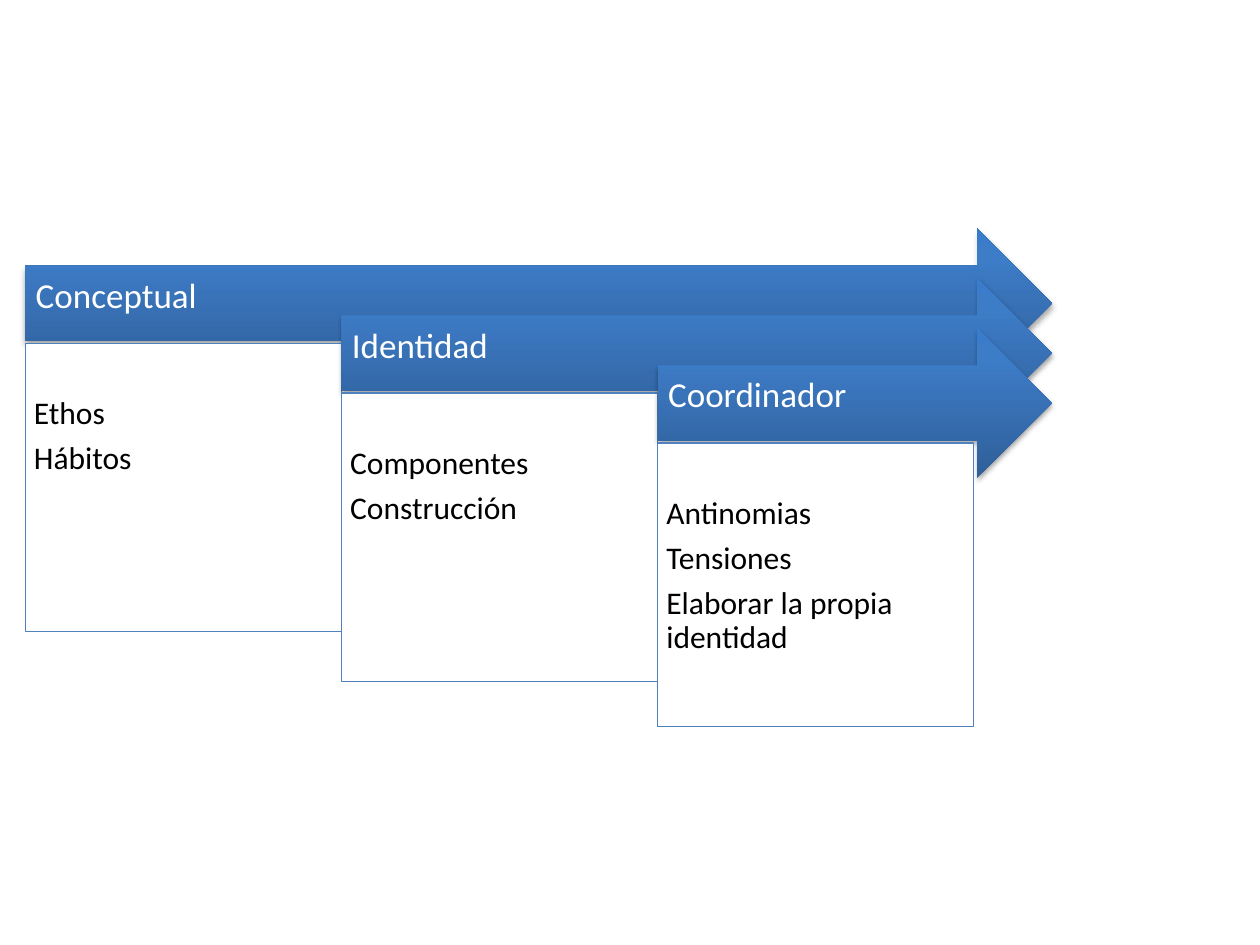
import dataclasses

import pptx
import pptx.dml.color
import pptx.enum.shapes
import pptx.enum.text
import pptx.oxml
import pptx.oxml.ns
import pptx.util

Pt = pptx.util.Pt
RGB = pptx.dml.color.RGBColor.from_string
SHAPE = pptx.enum.shapes.MSO_SHAPE
ANCHOR = pptx.enum.text.MSO_ANCHOR


@dataclasses.dataclass(frozen=True)
class Theme:
    font: str = "Calibri"
    heading_size: float = 20
    topic_size: float = 18
    heading_color: str = "FFFFFF"
    topic_color: str = "000000"
    panel_fill: str = "FFFFFF"
    panel_line: str = "4F81BD"
    arrow_stops: tuple = ((0, "2F5F99"), (80, "3D7CC7"), (100, "3A7CCB"))
    shadow_color: str = "000000"


THEME = Theme()

# Staircase geometry, in points
LEFT, TOP = 14.4, 130.5
STEP_X, STEP_Y = 180.7, 28.5
ARROW_TIP = 601.2
ARROW_HEIGHT = 85.7
PANEL_DROP = 65.6

# Heading, panel height, topics
STAGES = [
    ("Conceptual", 164.9, ["Ethos", "Hábitos"]),
    ("Identidad", 164.9, ["Componentes", "Construcción"]),
    ("Coordinador", 162, ["Antinomias", "Tensiones",
                          "Elaborar la propia identidad"]),
]


def apply_format(target, values):
    for name, value in values.items():
        setattr(target, name, value)


def drawing_element(xml):
    namespace = pptx.oxml.ns.nsdecls("a")
    return pptx.oxml.parse_xml(xml.replace(">", f" {namespace}>", 1))


def write_lines(shape, lines, size, color, anchor, insets):
    frame = shape.text_frame
    left, top, right, bottom = map(Pt, insets)
    apply_format(frame, {
        "word_wrap": True, "vertical_anchor": anchor,
        "margin_left": left, "margin_top": top,
        "margin_right": right, "margin_bottom": bottom,
    })
    frame.text = "\n".join(lines)
    for paragraph in frame.paragraphs:
        apply_format(paragraph, {
            "alignment": pptx.enum.text.PP_ALIGN.LEFT,
            "line_spacing": 0.9, "space_after": Pt(6.3),
        })
        apply_format(paragraph.font, {"name": THEME.font, "size": Pt(size)})
        paragraph.font.color.rgb = RGB(color)


def add_arrow(slide, heading, left, top):
    arrow = slide.shapes.add_shape(
        SHAPE.RIGHT_ARROW, Pt(left), Pt(top),
        Pt(ARROW_TIP - left), Pt(ARROW_HEIGHT))
    arrow.line.fill.background()

    # Three-stop gradient, darkest at the bottom
    arrow.fill.gradient()
    arrow.fill.gradient_angle = 90
    properties = arrow._element.spPr
    stops = properties.find(".//" + pptx.oxml.ns.qn("a:gsLst"))
    stops.clear()
    for position, color in THEME.arrow_stops:
        stops.append(drawing_element(
            f'<a:gs pos="{position * 1000}"><a:srgbClr val="{color}"/></a:gs>'))

    # Soft shadow straight below
    arrow.shadow.inherit = False
    properties.find(pptx.oxml.ns.qn("a:effectLst")).append(drawing_element(
        f'<a:outerShdw blurRad="{Pt(3.1)}" dist="{Pt(1.8)}" dir="5400000" '
        f'rotWithShape="0"><a:srgbClr val="{THEME.shadow_color}">'
        '<a:alpha val="35000"/></a:srgbClr></a:outerShdw>'))

    write_lines(arrow, [heading], THEME.heading_size, THEME.heading_color,
                ANCHOR.MIDDLE, (6, 6, 20, 13.5))


def add_panel(slide, topics, left, top, height):
    panel = slide.shapes.add_shape(
        SHAPE.RECTANGLE, Pt(left), Pt(top), Pt(STEP_X), Pt(height))
    panel.shadow.inherit = False
    panel.fill.solid()
    panel.fill.fore_color.rgb = RGB(THEME.panel_fill)
    panel.line.color.rgb = RGB(THEME.panel_line)
    panel.line.width = Pt(0.75)
    # The deep top inset keeps the topics clear of the arrow
    write_lines(panel, topics, THEME.topic_size, THEME.topic_color,
                ANCHOR.TOP, (5, 31, 5, 5))


def main():
    deck = pptx.Presentation()
    apply_format(deck, {"slide_width": Pt(720), "slide_height": Pt(540)})
    slide = deck.slides.add_slide(deck.slide_layouts[6])

    # Each stage starts one step further right and down
    for step, (heading, panel_height, topics) in enumerate(STAGES):
        left, top = LEFT + step * STEP_X, TOP + step * STEP_Y
        add_arrow(slide, heading, left, top)
        add_panel(slide, topics, left, top + PANEL_DROP, panel_height)

    deck.save("out.pptx")


if __name__ == "__main__":
    main()
